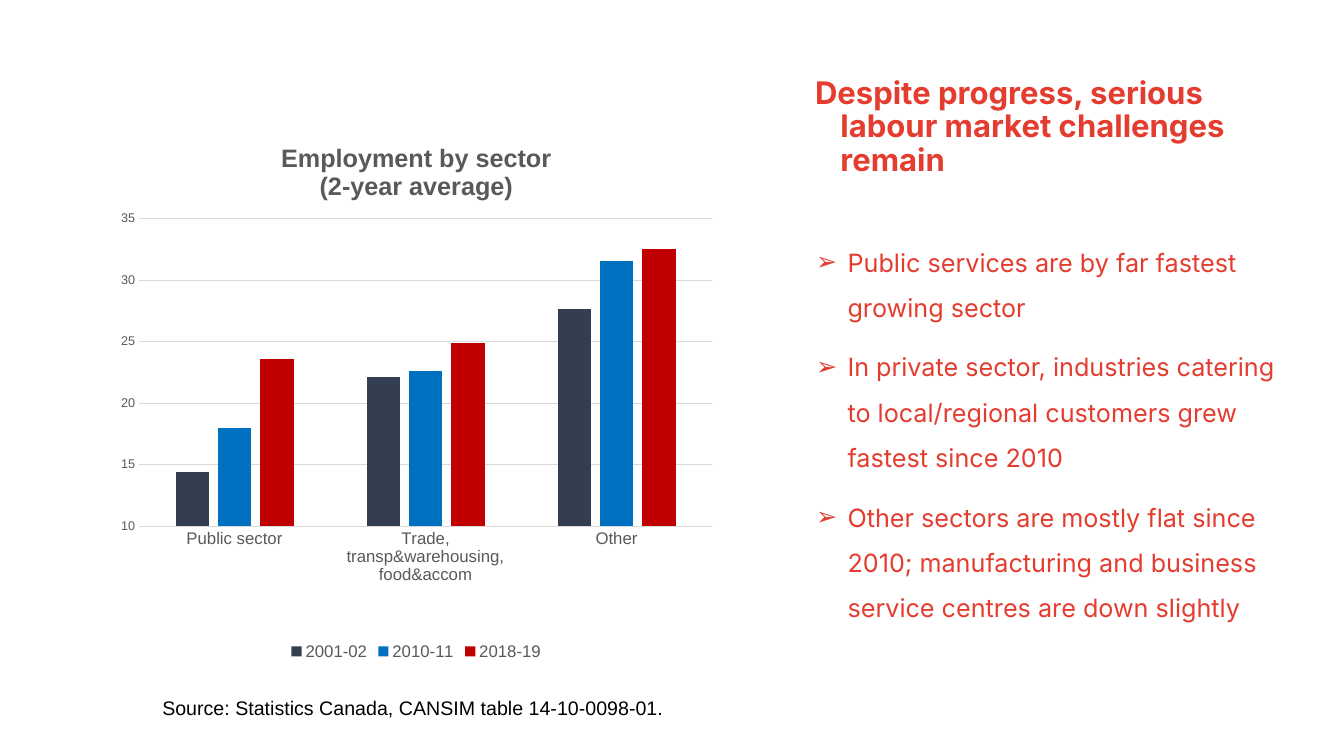
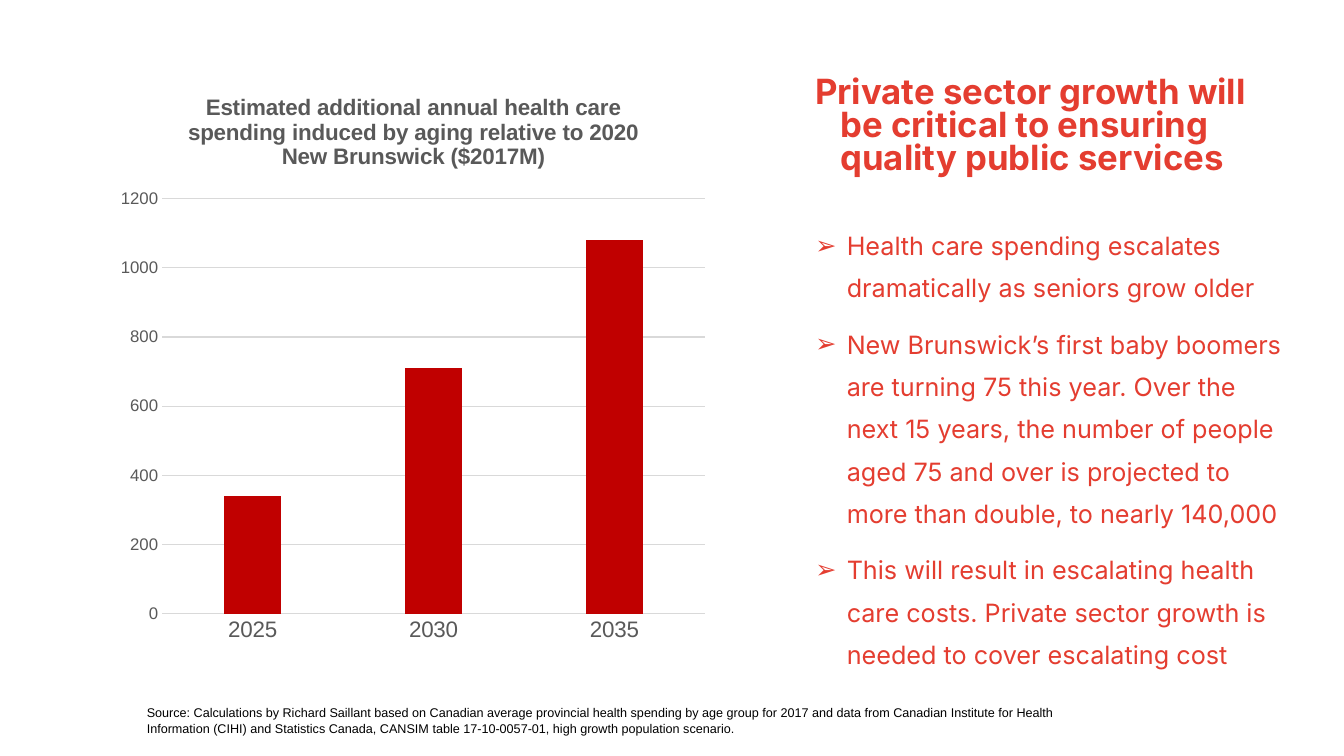
from lxml.etree import SubElement
from pptx import Presentation
from pptx.chart.data import CategoryChartData
from pptx.dml.color import RGBColor
from pptx.enum.chart import XL_CHART_TYPE, XL_LEGEND_POSITION, XL_TICK_MARK
from pptx.oxml import parse_xml
from pptx.oxml.ns import nsdecls, qn
from pptx.util import Cm, Pt

# Shared style
RED = RGBColor(0xE4, 0x3D, 0x30)
BLACK = RGBColor(0, 0, 0)
GREY = RGBColor(0x59, 0x59, 0x59)
RULE = RGBColor(0xD9, 0xD9, 0xD9)
NAVY = RGBColor(0x33, 0x3F, 0x50)
BLUE = RGBColor(0x00, 0x70, 0xC0)
DARK = RGBColor(0xC0, 0x00, 0x00)
HEAD, PLAIN = "Inter", "Arial"
HEAD_BOX = (19.66, 1.83, 12.93, 3.3)


def set_font(font, name, size, color, bold=False):
    font.name, font.size, font.bold = name, Pt(size), bold
    font.color.rgb = color


def add_frame(slide, box):
    frame = slide.shapes.add_textbox(*map(Cm, box)).text_frame
    frame.word_wrap = True
    return frame


def add_run(para, text, *style):
    run = para.add_run()
    run.text = text
    set_font(run.font, *style)


def hang(para, left, first):
    props = para._p.get_or_add_pPr()
    props.set("marL", str(Cm(left)))
    props.set("indent", str(Cm(first)))
    return props


def add_head(slide, text, size, space):
    para = add_frame(slide, HEAD_BOX).paragraphs[0]
    hang(para, 1.27, -0.64)
    para.line_spacing = space
    add_run(para, text, HEAD, size, RED, True)


def add_points(slide, box, points, space):
    frame = add_frame(slide, box)
    for num, text in enumerate(points):
        para = frame.add_paragraph() if num else frame.paragraphs[0]
        props = hang(para, 1.43, -0.79)
        tint = SubElement(props, qn("a:buClr"))
        SubElement(tint, qn("a:srgbClr")).set("val", str(RED))
        SubElement(props, qn("a:buFont")).set("typeface", PLAIN)
        SubElement(props, qn("a:buChar")).set("char", "➢")
        para.line_spacing = space
        if num:
            para.space_before = Pt(10)
        add_run(para, text, HEAD, 18, RED)


def add_source(slide, box, text, size):
    para = add_frame(slide, box).paragraphs[0]
    add_run(para, text, PLAIN, size, BLACK)


def place_plot(chart, plot):
    """Fix the inner plot area as fractions of the chart."""
    area = chart._chartSpace.chart.plotArea
    for old in area.findall(qn("c:layout")):
        area.remove(old)
    tags = [("layoutTarget", "inner"), ("xMode", "edge"), ("yMode", "edge")]
    tags += zip("xywh", plot)
    parts = "".join(f'<c:{tag} val="{val}"/>' for tag, val in tags)
    area.insert(0, parse_xml(
        f'<c:layout {nsdecls("c")}><c:manualLayout>{parts}'
        '</c:manualLayout></c:layout>'))


def style_axis(axis, size):
    axis.major_tick_mark = axis.minor_tick_mark = XL_TICK_MARK.NONE
    set_font(axis.tick_labels.font, PLAIN, size, GREY)


def style_line(line):
    line.color.rgb = RULE
    line.width = Pt(0.75)


def add_bars(slide, box, title, size, cats, rows, plot, span, labels,
             legend=False):
    data = CategoryChartData(number_format="General")
    data.categories = cats
    for name, vals, _ in rows:
        data.add_series(name, vals)
    chart = slide.shapes.add_chart(
        XL_CHART_TYPE.COLUMN_CLUSTERED, *map(Cm, box), data).chart
    set_font(chart.font, PLAIN, 10, BLACK)
    place_plot(chart, plot)

    # Title
    chart.has_title = True
    chart.chart_title.include_in_layout = False
    frame = chart.chart_title.text_frame
    for num, text in enumerate(title):
        para = frame.add_paragraph() if num else frame.paragraphs[0]
        add_run(para, text, PLAIN, size, GREY, True)

    # Columns
    bars = chart.plots[0]
    bars.vary_by_categories = False
    bars.gap_width, bars.overlap = 219, -27
    for series, (_, _, color) in zip(bars.series, rows):
        series.format.fill.solid()
        series.format.fill.fore_color.rgb = color

    # Axes
    cat, val = chart.category_axis, chart.value_axis
    style_axis(cat, labels[0])
    style_axis(val, labels[1])
    style_line(cat.format.line)
    val.format.line.fill.background()
    val.has_major_gridlines = True
    style_line(val.major_gridlines.format.line)
    val.minimum_scale, val.maximum_scale, val.major_unit = span
    val.tick_labels.number_format = "0"
    val.tick_labels.number_format_is_linked = False

    # Legend
    chart.has_legend = legend
    if legend:
        chart.legend.position = XL_LEGEND_POSITION.BOTTOM
        chart.legend.include_in_layout = False
        set_font(chart.legend.font, PLAIN, 12, GREY)


def add_jobs(slide):
    add_head(slide, "Despite progress, serious labour market challenges "
             "remain", 22.2, 0.9)
    add_points(slide, (19.68, 5.72, 12.93, 11), [
        "Public services are by far fastest growing sector",
        "In private sector, industries catering to local/regional customers "
        "grew fastest since 2010",
        "Other sectors are mostly flat since 2010; manufacturing and "
        "business service centres are down slightly",
    ], 1.5)
    add_bars(
        slide, (2.64, 3.1, 15.7, 13.64),
        ["Employment by sector", "(2-year average)"], 18,
        ["Public sector", "Trade, transp&warehousing, food&accom", "Other"],
        [("2001-02", (14.4, 22.1, 27.7), NAVY),
         ("2010-11", (18, 22.6, 31.6), BLUE),
         ("2018-19", (23.6, 24.9, 32.5), DARK)],
        (0.055, 0.177, 0.92, 0.568), (10, 35, 5), (12, 9), legend=True)
    add_source(slide, (3.84, 17.4, 22.99, 0.86),
               "Source: Statistics Canada, CANSIM table 14-10-0098-01.", 14)


def add_health(slide):
    add_head(slide, "Private sector growth will be critical to ensuring "
             "quality public services", 24.8, 0.8)
    add_points(slide, (19.66, 5.38, 12.93, 12.24), [
        "Health care spending escalates dramatically as seniors grow older",
        "New Brunswick’s first baby boomers are turning 75 this year. Over "
        "the next 15 years, the number of people aged 75 and over is "
        "projected to more than double, to nearly 140,000",
        "This will result in escalating health care costs. Private sector "
        "growth is needed to cover escalating cost",
    ], 1.4)
    add_bars(
        slide, (2.62, 1.85, 15.6, 15.32),
        ["Estimated additional annual health care",
         "spending induced by aging relative to 2020",
         "New Brunswick ($2017M)"], 16,
        ["2025", "2030", "2035"],
        [("Series 1", (340, 710, 1080), DARK)],
        (0.094, 0.206, 0.877, 0.683), (0, 1200, 200), (16, 12))
    add_source(
        slide, (3.45, 17.65, 24.87, 1.02),
        "Source: Calculations by Richard Saillant based on Canadian average "
        "provincial health spending by age group for 2017 and data from "
        "Canadian Institute for Health Information (CIHI) and Statistics "
        "Canada, CANSIM table 17-10-0057-01, high growth population "
        "scenario.", 9)


def main():
    deck = Presentation()
    deck.slide_width, deck.slide_height = Cm(33.87), Cm(19.05)
    for build in (add_jobs, add_health):
        build(deck.slides.add_slide(deck.slide_layouts[6]))
    deck.save("out.pptx")


if __name__ == "__main__":
    main()
